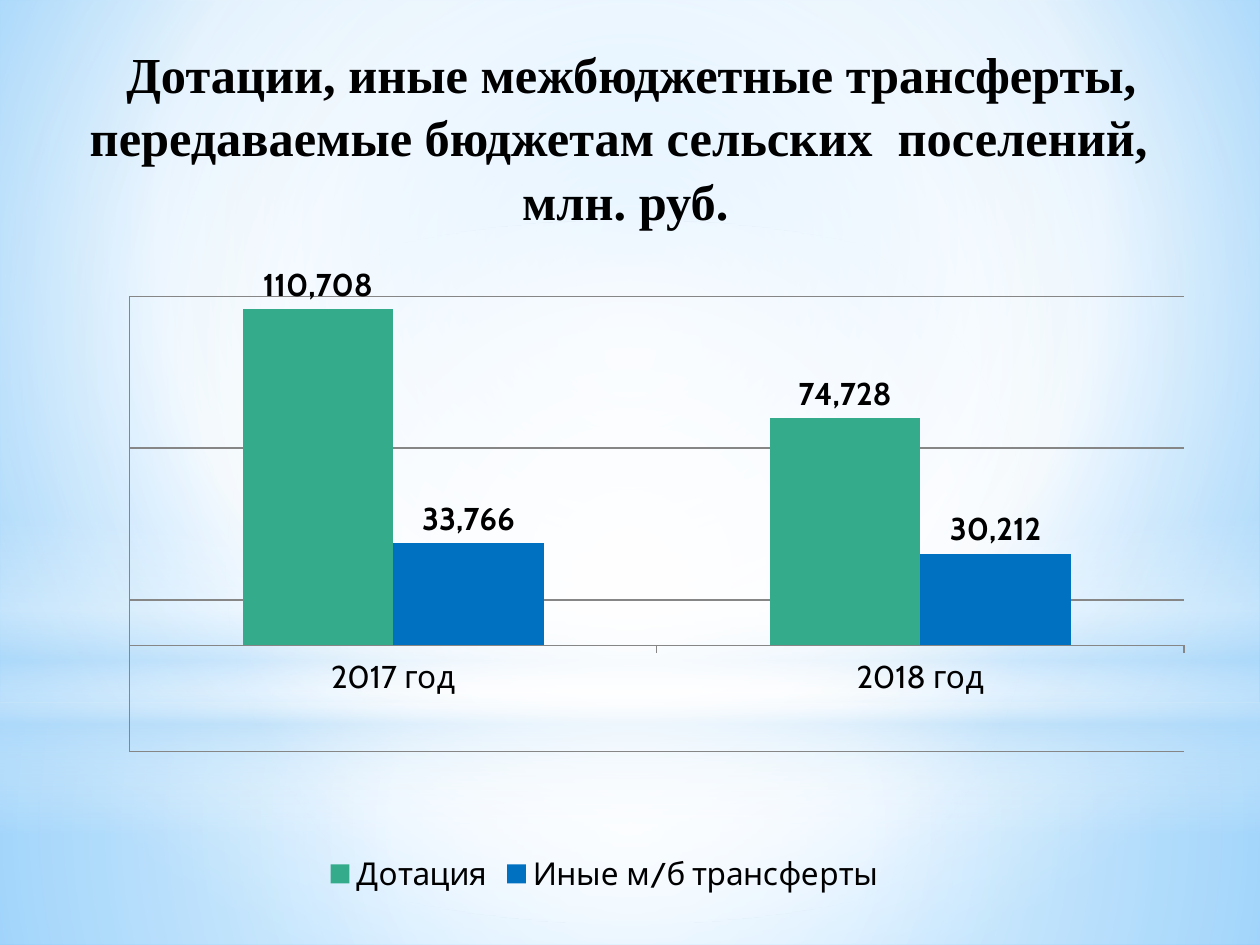
from lxml import etree
from pptx import Presentation
from pptx.chart.data import CategoryChartData
from pptx.dml.color import RGBColor
from pptx.enum.chart import XL_CHART_TYPE, XL_LABEL_POSITION, XL_LEGEND_POSITION, XL_TICK_LABEL_POSITION, XL_TICK_MARK
from pptx.enum.shapes import MSO_SHAPE
from pptx.enum.text import MSO_ANCHOR, MSO_AUTO_SIZE, PP_ALIGN
from pptx.oxml.ns import qn
from pptx.util import Cm, Pt

COLUMNS = XL_CHART_TYPE.COLUMN_CLUSTERED
OUTSIDE_END = XL_LABEL_POSITION.OUTSIDE_END
BOTTOM = XL_LEGEND_POSITION.BOTTOM
NO_LABELS = XL_TICK_LABEL_POSITION.NONE
NO_TICK, TICK_OUT = XL_TICK_MARK.NONE, XL_TICK_MARK.OUTSIDE
RECTANGLE, OVAL = MSO_SHAPE.RECTANGLE, MSO_SHAPE.OVAL
MIDDLE, CENTER = MSO_ANCHOR.MIDDLE, PP_ALIGN.CENTER
NO_FIT = MSO_AUTO_SIZE.NONE

BLACK = RGBColor(0x00, 0x00, 0x00)
WHITE = RGBColor(0xFF, 0xFF, 0xFF)
GRAY = RGBColor(0x86, 0x86, 0x86)
GREEN = RGBColor(0x34, 0xAC, 0x8B)
BLUE = RGBColor(0x00, 0x70, 0xC0)
PALE = RGBColor(0xB4, 0xDC, 0xFA)
SKY = RGBColor(0x9E, 0xD5, 0xFF)
AZURE = RGBColor(0x5B, 0xB9, 0xFF)

WIDTH, HEIGHT, HORIZON = 25.4, 19.05, 14.17
CENTERED = (50, 50, 50, 50)


class SlideBuilder:
    title_font = "Times New Roman"
    chart_font = "Cabin"
    title_size = Pt(28.8)
    chart_size = Pt(18)

    def __init__(self, deck):
        self.page = deck.slides.add_slide(deck.slide_layouts[5])

    def gradient(self, parent, stops, focus=None):
        solid = parent.find(qn("a:solidFill"))
        fill = etree.Element(qn("a:gradFill"), rotWithShape="1")
        stop_list = etree.SubElement(fill, qn("a:gsLst"))
        for position, color, opacity in stops:
            stop = etree.SubElement(stop_list, qn("a:gs"), pos=str(position * 1000))
            tint = etree.SubElement(stop, qn("a:srgbClr"), val=str(color))
            if opacity < 100:
                etree.SubElement(tint, qn("a:alpha"), val=str(opacity * 1000))
        if focus:
            route = etree.SubElement(fill, qn("a:path"), path="circle")
            edges = {side: str(value * 1000) for side, value in zip("ltrb", focus)}
            etree.SubElement(route, qn("a:fillToRect"), edges)
        else:
            etree.SubElement(fill, qn("a:lin"), ang="5400000", scaled="0")
        parent.replace(solid, fill)

    def background(self, stops, focus):
        self.page.background.fill.solid()
        self.gradient(self.page.element.find(".//" + qn("p:bgPr")), stops, focus)

    def glow(self, kind, top, height, stops, focus=None):
        shape = self.page.shapes.add_shape(kind, Cm(0), Cm(top), Cm(WIDTH), Cm(height))
        shape.shadow.inherit = False
        shape.line.fill.background()
        shape.fill.solid()
        self.gradient(shape.element.spPr, stops, focus)

    def title(self, left, top, width, height, lines):
        box = self.page.shapes.title
        box.left, box.top, box.width, box.height = Cm(left), Cm(top), Cm(width), Cm(height)
        frame = box.text_frame
        frame.word_wrap = True
        frame.auto_size = NO_FIT
        frame.vertical_anchor = MIDDLE
        for index, line in enumerate(lines):
            para = frame.add_paragraph() if index else frame.paragraphs[0]
            para.alignment = CENTER
            para.line_spacing = 1.05
            span = para.add_run()
            span.text = line
            span.font.name = self.title_font
            span.font.size = self.title_size
            span.font.bold = True
            span.font.color.rgb = BLACK
        box.element.getparent().append(box.element)

    def chart(self, left, top, width, height, categories, series, plot_area):
        data = CategoryChartData(number_format="#,##0")
        data.categories = categories
        for name, values, _ in series:
            data.add_series(name, values)
        chart = self.page.shapes.add_chart(
            COLUMNS, Cm(left), Cm(top), Cm(width), Cm(height), data).chart
        chart.has_title = False
        chart.font.name = self.chart_font
        chart.font.size = self.chart_size
        chart.font.color.rgb = BLACK
        chart.has_legend = True
        chart.legend.position = BOTTOM
        chart.legend.include_in_layout = False
        self.axes(chart)
        plot = chart.plots[0]
        plot.gap_width = 150
        plot.overlap = 0
        plot.vary_by_categories = False
        for column, (_, _, color) in zip(plot.series, series):
            column.format.fill.solid()
            column.format.fill.fore_color.rgb = color
            labels = column.data_labels
            labels.show_value = True
            labels.number_format = "#,##0"
            labels.number_format_is_linked = False
            labels.position = OUTSIDE_END
            labels.font.bold = True
            labels.font.size = self.chart_size
            labels.font.name = self.chart_font
            labels.font.color.rgb = BLACK
        self.plot_layout(chart, plot_area)

    def axes(self, chart):
        scale = chart.value_axis
        scale.minimum_scale, scale.maximum_scale, scale.major_unit = -35000, 115000, 50000
        scale.tick_label_position = NO_LABELS
        scale.major_tick_mark = NO_TICK
        scale.has_major_gridlines = True
        chart.category_axis.major_tick_mark = TICK_OUT
        for line in (scale.format.line, scale.major_gridlines.format.line,
                     chart.category_axis.format.line):
            line.color.rgb = GRAY
            line.width = Pt(0.75)

    def plot_layout(self, chart, plot_area):
        area = chart.element.find(".//" + qn("c:plotArea"))
        layout = area.find(qn("c:layout"))
        if layout is None:
            layout = etree.Element(qn("c:layout"))
            area.insert(0, layout)
        manual = etree.SubElement(layout, qn("c:manualLayout"))
        settings = [("layoutTarget", "inner"), ("xMode", "edge"), ("yMode", "edge")]
        for tag, value in settings + list(zip("xywh", plot_area)):
            etree.SubElement(manual, qn("c:" + tag), val=str(value))


def main():
    deck = Presentation()
    deck.slide_width, deck.slide_height = Cm(WIDTH), Cm(HEIGHT)
    slide = SlideBuilder(deck)
    slide.background([(0, SKY, 100), (60, WHITE, 100), (100, AZURE, 100)], (20, 10, 20, 60))
    slide.glow(RECTANGLE, HORIZON, HEIGHT - HORIZON,
               [(0, WHITE, 91), (37, WHITE, 76), (100, PALE, 79)], CENTERED)
    slide.glow(RECTANGLE, 0, HORIZON,
               [(0, WHITE, 89), (48, WHITE, 62), (100, PALE, 79)], CENTERED)
    slide.glow(RECTANGLE, 10.46, 6.35,
               [(0, WHITE, 0), (29, WHITE, 30), (45, PALE, 40),
                (55, WHITE, 26), (65, PALE, 60), (100, WHITE, 0)])
    slide.glow(OVAL, 4.45, HORIZON, [(0, WHITE, 100), (56, WHITE, 0)], CENTERED)
    slide.chart(0.51, 4.62, 23.37, 13.51, ["2017 год", "2018 год"],
                [("Дотация", (110708, 74728), GREEN),
                 ("Иные м/б трансферты", (33766, 30212), BLUE)],
                (0.09, 0.1, 0.91, 0.68))
    slide.title(0.3, 0.84, 24.61, 3.76,
                [" Дотации, иные межбюджетные трансферты, "
                 "передаваемые бюджетам сельских  поселений, ", "млн. руб."])
    deck.save("out.pptx")


if __name__ == "__main__":
    main()
